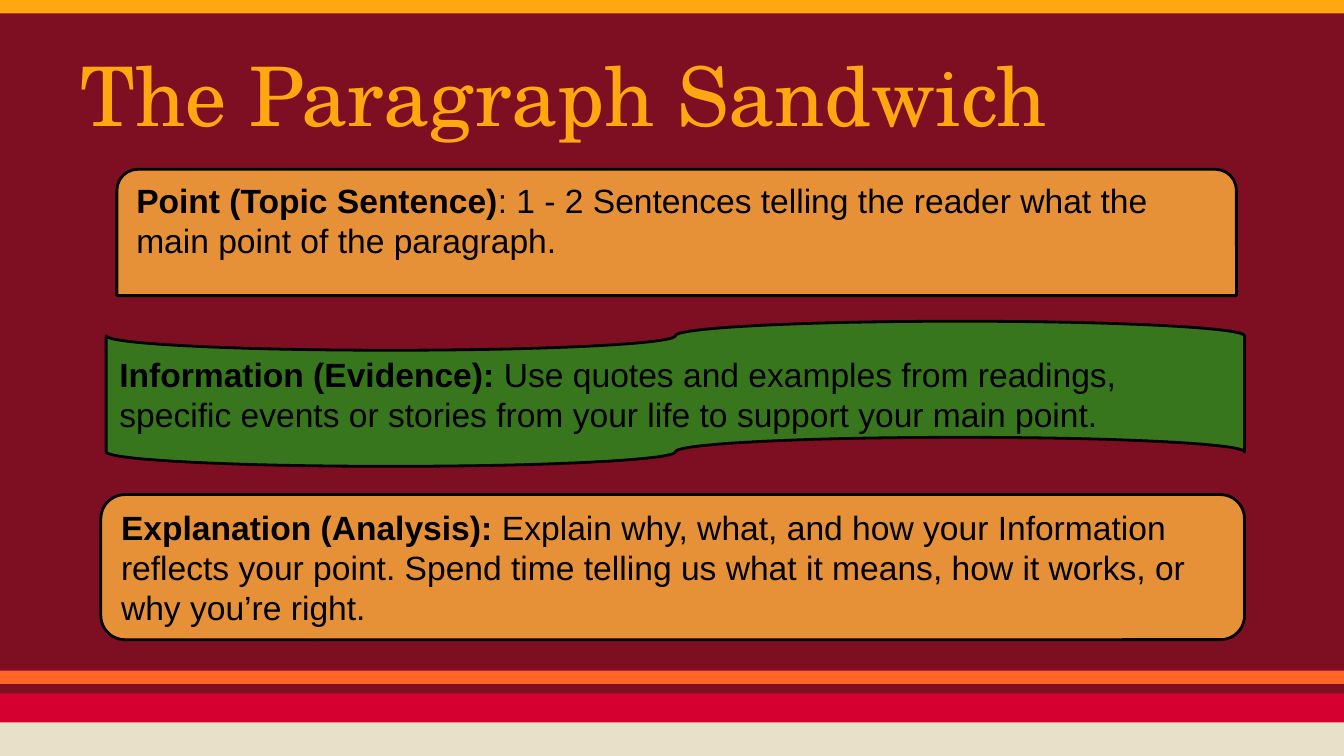
from pptx import Presentation
from pptx.dml.color import RGBColor
from pptx.enum.shapes import MSO_SHAPE
from pptx.enum.text import MSO_ANCHOR, PP_ALIGN
from pptx.util import Inches, Pt

MAROON = RGBColor(0x7E, 0x0F, 0x23)
GOLD = RGBColor(0xFF, 0xA7, 0x11)
CRIMSON = RGBColor(0xD6, 0x00, 0x30)
CREAM = RGBColor(0xE9, 0xE0, 0xC9)
ORANGE = RGBColor(0xFF, 0x64, 0x28)
BREAD = RGBColor(0xE6, 0x91, 0x38)
LETTUCE = RGBColor(0x38, 0x76, 0x1D)
BLACK = RGBColor(0, 0, 0)

WIDTH = 10
HEIGHT = WIDTH * 9 / 16

BANDS = [
    (0, 0.1, GOLD),
    (5.16, 0.25, CRIMSON),
    (HEIGHT - 0.25, 0.25, CREAM),
    (4.99, 0.1, ORANGE),
]

LAYERS = [
    (MSO_SHAPE.FLOWCHART_PUNCHED_TAPE, (0.79, 2.39, 8.47, 1.08), LETTUCE,
     "Information (Evidence):",
     " Use quotes and examples from readings, specific events or stories "
     "from your life to support your main point."),
    (MSO_SHAPE.ROUNDED_RECTANGLE, (0.75, 3.68, 8.51, 1.08), BREAD,
     "Explanation (Analysis):",
     " Explain why, what, and how your Information reflects your point. "
     "Spend time telling us what it means, how it works, or why you’re right."),
    (MSO_SHAPE.ROUND_2_SAME_RECTANGLE, (0.87, 1.26, 8.33, 0.94), BREAD,
     "Point (Topic Sentence)",
     ": 1 - 2 Sentences telling the reader what the main point of the paragraph."),
]


def add_filled_shape(page, kind, box, color):
    shape = page.shapes.add_shape(kind, *map(Inches, box))
    shape.shadow.inherit = False
    shape.fill.solid()
    shape.fill.fore_color.rgb = color
    return shape


def set_frame(frame, anchor=MSO_ANCHOR.MIDDLE, top=0.1):
    frame.word_wrap = True
    frame.vertical_anchor = anchor
    frame.margin_left = frame.margin_right = frame.margin_bottom = Inches(0.1)
    frame.margin_top = Inches(top)


def set_font(para, name, size, color):
    para.alignment = PP_ALIGN.LEFT
    para.font.name = name
    para.font.size = Pt(size)
    para.font.color.rgb = color


def add_bands(page):
    for top, height, color in BANDS:
        band = add_filled_shape(page, MSO_SHAPE.RECTANGLE, (0, top, WIDTH, height), color)
        band.line.fill.background()


def add_title(page, box, text):
    frame = page.shapes.add_textbox(*map(Inches, box)).text_frame
    set_frame(frame)
    para = frame.paragraphs[0]
    para.text = text
    set_font(para, "TeX Gyre Schola", 44, GOLD)


def add_layer(page, kind, box, color, heading, detail):
    layer = add_filled_shape(page, kind, box, color)
    layer.line.color.rgb = BLACK
    layer.line.width = Pt(1.5)
    if kind == MSO_SHAPE.ROUND_2_SAME_RECTANGLE:
        set_frame(layer.text_frame, MSO_ANCHOR.TOP, 0.03)
    else:
        set_frame(layer.text_frame)
    para = layer.text_frame.paragraphs[0]
    set_font(para, "Arial", 18, BLACK)
    for text, bold in ((heading, True), (detail, False)):
        span = para.add_run()
        span.text = text
        span.font.bold = bold


def main():
    deck = Presentation()
    deck.slide_width = Inches(WIDTH)
    deck.slide_height = Inches(HEIGHT)
    page = deck.slides.add_slide(deck.slide_layouts[6])
    page.background.fill.solid()
    page.background.fill.fore_color.rgb = MAROON
    add_bands(page)
    add_title(page, (0.5, 0.23, 9, 0.94), "The Paragraph Sandwich")
    for layer in LAYERS:
        add_layer(page, *layer)
    deck.save("out.pptx")


if __name__ == "__main__":
    main()
